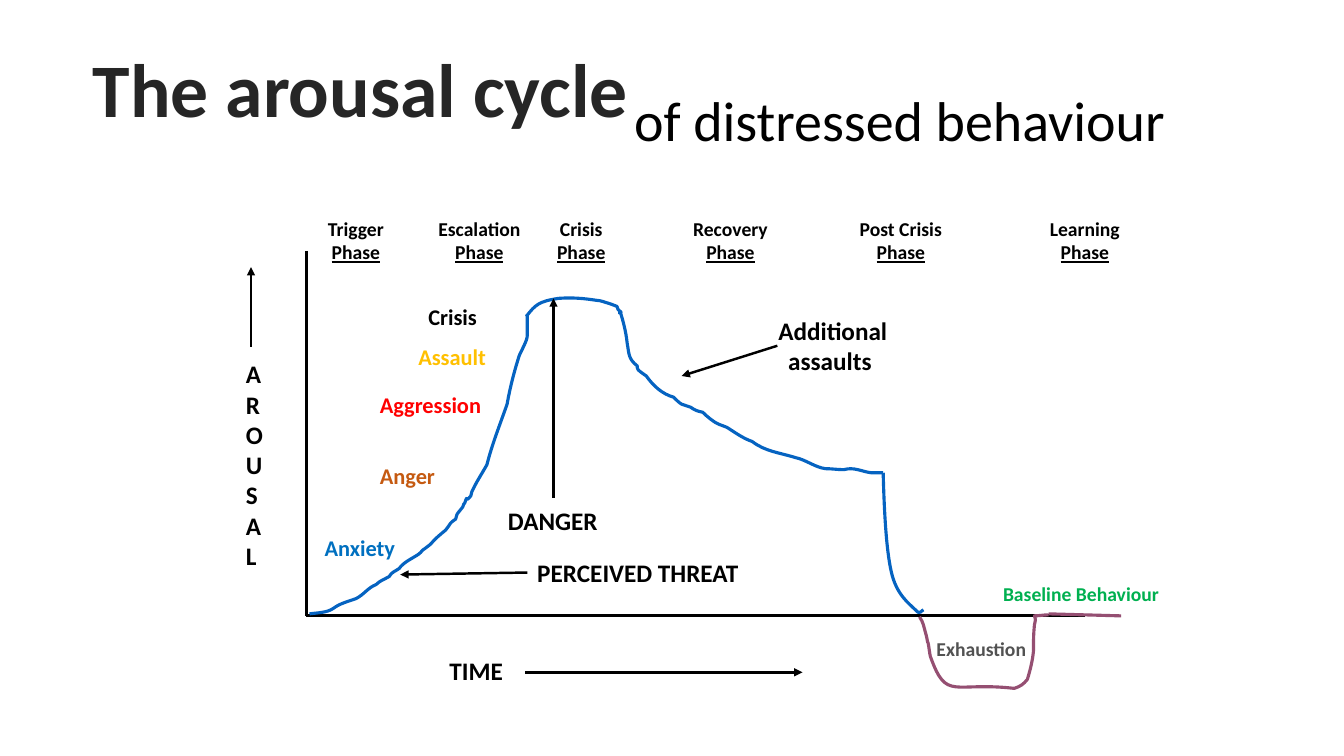
from lxml import etree
from pptx import Presentation
from pptx import util as u
from pptx.dml.color import RGBColor
from pptx.enum import text
from pptx.enum import shapes
from pptx.oxml.ns import qn

COLORS = {
    "black": "000000", "title": "262626", "white": "FFFFFF", "curve": "0563C1",
    "purple": "954F72", "blue": "0070C0", "orange": "C55A11", "red": "FF0000",
    "amber": "FFC000", "green": "00B050", "grey": "525252",
}

PHASES = [
    ("Trigger", 3.15, 0.76), ("Escalation", 4.24, 1.03), ("Crisis", 5.42, 0.69),
    ("Recovery", 6.77, 0.95), ("Post Crisis", 8.42, 1.03), ("Learning", 10.31, 0.9),
]

STAGES = [
    ("Anxiety", (3.12, 5.25, 0.91, 0.37), 16, "blue"),
    ("Anger", (3.67, 4.54, 0.76, 0.37), 16, "orange"),
    ("Aggression", (3.67, 3.83, 1.22, 0.37), 16, "red"),
    ("Assault", (4.05, 3.36, 0.88, 0.37), 16, "amber"),
    ("Crisis", (4.15, 2.96, 0.69, 0.37), 16, "black"),
    ("Baseline Behaviour", (9.85, 5.72, 1.76, 0.34), 14, "green"),
    ("Exhaustion", (9.19, 6.27, 1.1, 0.34), 14, "grey"),
    ("TIME", (4.36, 6.45, 0.74, 0.4), 18, "black"),
]

AXES = [((3.04, 2.49), (3.04, 6.11)), ((3.04, 6.11), (10.76, 6.11))]

ARROWS = [
    ((5.21, 6.67), (7.96, 6.67)), ((2.49, 3.44), (2.49, 2.65)),
    ((7.71, 3.43), (6.76, 3.73)), ((5.49, 4.94), (5.49, 2.96)),
]

ESCALATION = [
    (3.07, 6.09),
    (3.14, 6.08, 3.24, 6.08, 3.3, 6.04), (3.36, 6, 3.36, 6, 3.44, 5.97),
    (3.48, 5.95, 3.49, 5.96, 3.53, 5.94), (3.61, 5.9, 3.65, 5.83, 3.73, 5.8),
    (3.77, 5.76, 3.81, 5.75, 3.86, 5.72), (3.89, 5.67, 3.92, 5.67, 3.96, 5.64),
    (4, 5.58, 4.09, 5.54, 4.15, 5.5), (4.17, 5.49, 4.18, 5.47, 4.19, 5.46),
    (4.22, 5.44, 4.27, 5.4, 4.27, 5.4), (4.31, 5.35, 4.37, 5.3, 4.42, 5.26),
    (4.49, 5.17, 4.45, 5.2, 4.52, 5.15), (4.54, 5.08, 4.52, 5.12, 4.59, 5.03),
    (4.59, 5.01, 4.61, 4.99, 4.61, 4.99), (4.65, 4.88, 4.6, 5.01, 4.67, 4.92),
    (4.68, 4.91, 4.67, 4.89, 4.68, 4.88), (4.72, 4.79, 4.78, 4.7, 4.83, 4.61),
    (4.88, 4.41, 4.96, 4.21, 5.03, 4.01), (5.06, 3.84, 5.1, 3.69, 5.15, 3.53),
    (5.17, 3.48, 5.23, 3.38, 5.23, 3.33), (5.23, 3.26, 5.23, 3.19, 5.23, 3.12),
]
CRISIS = [
    (5.22, 3.14),
    (5.31, 3.02, 5.35, 2.99, 5.54, 2.96), (5.68, 2.95, 5.79, 2.96, 5.92, 2.98),
    (5.96, 2.98, 6, 3, 6.04, 3.01), (6.07, 3.02, 6.12, 3.04, 6.12, 3.04),
    (6.12, 3.05, 6.12, 3.06, 6.13, 3.07), (6.16, 3.1, 6.18, 3.1, 6.13, 3.1),
]
RECOVERY = [
    (6.15, 3.09),
    (6.18, 3.18, 6.21, 3.3, 6.22, 3.4), (6.24, 3.51, 6.23, 3.56, 6.32, 3.63),
    (6.32, 3.64, 6.32, 3.66, 6.33, 3.67), (6.35, 3.69, 6.41, 3.73, 6.41, 3.73),
    (6.48, 3.83, 6.57, 3.91, 6.68, 3.94), (6.7, 3.96, 6.74, 4, 6.76, 4.01),
    (6.79, 4.02, 6.85, 4.04, 6.85, 4.04), (6.89, 4.07, 6.92, 4.08, 6.97, 4.09),
    (7.01, 4.13, 7.08, 4.19, 7.13, 4.21), (7.16, 4.22, 7.21, 4.24, 7.21, 4.24),
    (7.29, 4.29, 7.37, 4.35, 7.46, 4.38), (7.59, 4.48, 7.73, 4.49, 7.89, 4.54),
    (7.99, 4.56, 8.09, 4.64, 8.19, 4.65), (8.25, 4.65, 8.31, 4.66, 8.37, 4.66),
    (8.47, 4.63, 8.55, 4.68, 8.64, 4.69), (8.68, 4.69, 8.72, 4.69, 8.76, 4.69),
]
POST_CRISIS = [
    (8.76, 4.69),
    (8.77, 5.07, 8.79, 5.45, 8.84, 5.67), (8.89, 5.9, 9.02, 5.99, 9.08, 6.05),
    (9.13, 6.11, 9.14, 6.05, 9.16, 6.05),
]
EXHAUSTION = [
    (9.12, 6.12),
    (9.16, 6.18, 9.16, 6.21, 9.18, 6.28), (9.19, 6.31, 9.2, 6.37, 9.2, 6.37),
    (9.21, 6.37, 9.22, 6.5, 9.23, 6.52), (9.39, 6.96, 9.45, 6.76, 10.06, 6.83),
    (10.12, 6.81, 10.15, 6.79, 10.19, 6.74), (10.22, 6.64, 10.24, 6.56, 10.25, 6.46),
    (10.25, 6.37, 10.25, 6.29, 10.26, 6.2), (10.26, 6.18, 10.27, 6.17, 10.27, 6.15),
    (10.27, 6.14, 10.26, 6.11, 10.26, 6.11), (10.31, 6.11, 10.35, 6.1, 10.4, 6.1),
]


def rgb(name):
    return RGBColor.from_string(COLORS[name])


def fill_text(box, lines, size, color="black", bold=True, wrap=False, centered=False):
    frame = box.text_frame
    settings = {
        "word_wrap": wrap,
        "auto_size": text.MSO_AUTO_SIZE.SHAPE_TO_FIT_TEXT,
        "vertical_anchor": text.MSO_ANCHOR.TOP,
    }
    for key, value in settings.items():
        setattr(frame, key, value)
    spans = []
    for index, line in enumerate(lines):
        para = frame.add_paragraph() if index else frame.paragraphs[0]
        para.alignment = text.PP_ALIGN.CENTER if centered else text.PP_ALIGN.LEFT
        span = para.add_run()
        span.text = line
        for key, value in {"name": "Calibri", "size": u.Pt(size), "bold": bold}.items():
            setattr(span.font, key, value)
        span.font.color.rgb = rgb(color)
        spans.append(span)
    return spans


def add_label(page, lines, place, size, color="black", **options):
    box = page.shapes.add_textbox(*map(u.Inches, place))
    return box, fill_text(box, lines, size, color, **options)


def add_title(page, title):
    box = page.shapes.title
    place = {"left": 0.79, "top": 0.37, "width": 5.57, "height": 1.01}
    for key, value in place.items():
        setattr(box, key, u.Inches(value))
    span = fill_text(box, [title], 54, "title", centered=True)[0]
    outline = etree.Element(qn("a:ln"), w=str(u.Pt(1.06)))
    fill = etree.SubElement(outline, qn("a:solidFill"))
    etree.SubElement(fill, qn("a:srgbClr"), val=COLORS["white"])
    span.font._element.insert(0, outline)


def add_line(page, start, end, color="black", width=2.25, arrow=False):
    points = map(u.Inches, (*start, *end))
    line = page.shapes.add_connector(shapes.MSO_CONNECTOR.STRAIGHT, *points)
    line.line.color.rgb = rgb(color)
    line.line.width = u.Pt(width)
    if arrow:
        etree.SubElement(line.line._get_or_add_ln(), qn("a:tailEnd"), type="triangle")
    etree.SubElement(line.element.spPr, qn("a:effectLst"))
    return line


def add_curve(page, segments, color="curve"):
    start, *bends = segments
    points = [tuple(map(u.Inches, bend[i:i + 2])) for bend in bends for i in (0, 2, 4)]
    builder = page.shapes.build_freeform(*map(u.Inches, start))
    builder.add_line_segments(points, close=False)
    curve = builder.convert_to_shape()
    curve.shadow.inherit = False
    curve.fill.background()
    curve.line.color.rgb = rgb(color)
    curve.line.width = u.Pt(2.25)
    outline = next(curve.element.iter(qn("a:path")))
    steps = outline.findall(qn("a:lnTo"))
    for i in range(0, len(steps), 3):
        bezier = etree.SubElement(outline, qn("a:cubicBezTo"))
        for step in steps[i:i + 3]:
            bezier.append(step[0])
            outline.remove(step)


def main():
    deck = Presentation()
    deck.slide_width, deck.slide_height = u.Inches(13.33), u.Inches(7.5)
    page = deck.slides.add_slide(deck.slide_layouts[5])
    add_title(page, "The arousal cycle")
    add_label(page, ["of distressed behaviour"], (6.19, 0.8, 6.49, 0.77), 40,
              bold=False, wrap=True)
    for start, end in AXES:
        add_line(page, start, end)
    for segments in (ESCALATION, CRISIS, RECOVERY, POST_CRISIS):
        add_curve(page, segments)
    add_curve(page, EXHAUSTION, "purple")
    add_line(page, (10.4, 6.09), (11.12, 6.11), "purple")
    for name, left, width in PHASES:
        spans = add_label(page, [name, "Phase"], (left, 2.1, width, 0.57), 14, centered=True)[1]
        spans[1].font.underline = True
    for name, place, size, color in STAGES:
        add_label(page, [name], place, size, color)
    add_label(page, ["AROUSAL"], (2.34, 3.51, 0.42, 2.2), 18, wrap=True)
    add_label(page, ["DANGER"], (4.94, 4.96, 1.27, 0.4), 18, wrap=True)
    add_label(page, ["Additional assaults "], (7.43, 3.08, 1.66, 0.71), 18,
              wrap=True, centered=True)
    for start, end in ARROWS:
        add_line(page, start, end, width=1.75, arrow=True)
    threat = add_label(page, ["PERCEIVED THREAT"], (5.23, 5.48, 2.21, 0.4), 18)[0]
    pointer = add_line(page, (5.23, 5.68), (3.97, 5.7), width=1.75, arrow=True)
    pointer.begin_connect(threat, 1)
    deck.save("out.pptx")


if __name__ == "__main__":
    main()
